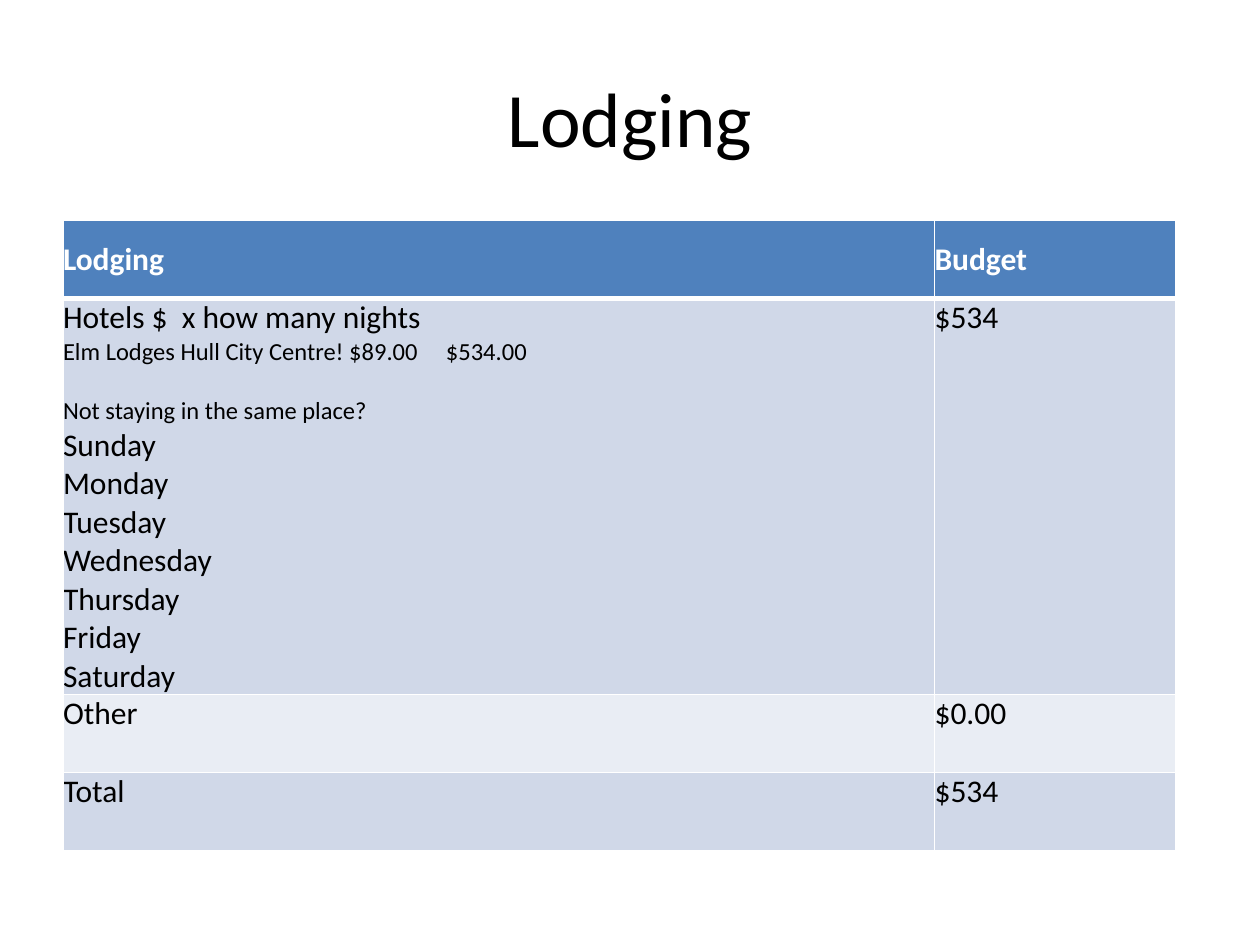
from lxml import etree
from pptx import Presentation
from pptx.dml.color import RGBColor
from pptx.enum.text import MSO_ANCHOR, PP_ALIGN
from pptx.oxml.ns import qn
from pptx.util import Cm, Pt

MIDDLE, TOP = MSO_ANCHOR.MIDDLE, MSO_ANCHOR.TOP
CENTER = PP_ALIGN.CENTER

COLORS = {
    "text": "000000",
    "header_text": "FFFFFF",
    "header": "4F81BD",
    "odd_row": "D0D8E8",
    "even_row": "E9EDF4",
    "border": "FFFFFF",
}
FONT = "Calibri"
TITLE = "Lodging"
HOTEL = "Elm Lodges Hull City Centre! $89.00\t$534.00"
QUESTION = "Not staying in the same place?"
DAYS = ["Sunday", "Monday", "Tuesday", "Wednesday", "Thursday", "Friday", "Saturday"]
BUDGET = [
    (["Lodging"], ["Budget"]),
    (["Hotels $  x how many nights", HOTEL, QUESTION, *DAYS], ["$534"]),
    (["Other"], ["$0.00"]),
    (["Total"], ["$534"]),
]
SMALL_LINES = (HOTEL, QUESTION)
COLUMN_WIDTHS = (17.57, 4.87)
ROW_HEIGHTS = (1.57, 7.98, 1.57, 1.57)
PRICE_TAB = Cm(7.72)
NO_MARGINS = dict.fromkeys(
    ("margin_left", "margin_right", "margin_top", "margin_bottom"), 0)


def apply_format(target, values):
    for name, value in values.items():
        setattr(target, name, value)


def write_line(paragraph, text, size, color, bold=False):
    run = paragraph.add_run()
    run.text = text
    apply_format(run.font, {"name": FONT, "size": Pt(size), "bold": bold})
    run.font.color.rgb = RGBColor.from_string(COLORS[color])


def add_borders(cell, widths):
    properties = cell._tc.get_or_add_tcPr()
    for position, (side, width) in enumerate(widths.items()):
        line = etree.Element(qn(f"a:ln{side}"), w=str(Pt(width)))
        fill = etree.SubElement(line, qn("a:solidFill"))
        etree.SubElement(fill, qn("a:srgbClr"), val=COLORS["border"])
        properties.insert(position, line)


def add_tab_stop(paragraph, position):
    tabs = etree.SubElement(paragraph._p.get_or_add_pPr(), qn("a:tabLst"))
    etree.SubElement(tabs, qn("a:tab"), pos=str(position), algn="l")


def fill_cell(cell, lines, row):
    header = row == 0
    band = "header" if header else "odd_row" if row % 2 else "even_row"
    apply_format(cell, {**NO_MARGINS, "vertical_anchor": MIDDLE if header else TOP})
    cell.fill.solid()
    cell.fill.fore_color.rgb = RGBColor.from_string(COLORS[band])
    add_borders(cell, {"L": 1, "R": 1, "T": 3 if row == 1 else 1, "B": 3 if header else 1})
    frame = cell.text_frame
    for index, text in enumerate(lines):
        paragraph = frame.add_paragraph() if index else frame.paragraphs[0]
        if text == QUESTION:
            paragraph.space_before = Pt(17)
        if text == HOTEL:
            add_tab_stop(paragraph, PRICE_TAB)
        write_line(paragraph, text, 14 if text in SMALL_LINES else 18,
                   "header_text" if header else "text", header)


def main():
    presentation = Presentation()
    apply_format(presentation, {"slide_width": Cm(25.4), "slide_height": Cm(19.05)})
    slide = presentation.slides.add_slide(presentation.slide_layouts[6])

    heading = slide.shapes.add_textbox(Cm(1.27), Cm(0.76), Cm(22.86), Cm(3.18)).text_frame
    apply_format(heading, {"word_wrap": True, "vertical_anchor": MIDDLE})
    heading.paragraphs[0].alignment = CENTER
    write_line(heading.paragraphs[0], TITLE, 44, "text")

    budget_table = slide.shapes.add_table(
        len(BUDGET), len(COLUMN_WIDTHS), Cm(1.27), Cm(4.45),
        Cm(sum(COLUMN_WIDTHS)), Cm(sum(ROW_HEIGHTS))).table
    for column, width in zip(budget_table.columns, COLUMN_WIDTHS):
        column.width = Cm(width)
    for row, (height, entries) in enumerate(zip(ROW_HEIGHTS, BUDGET)):
        budget_table.rows[row].height = Cm(height)
        for column, lines in enumerate(entries):
            fill_cell(budget_table.cell(row, column), lines, row)

    presentation.save("out.pptx")


if __name__ == "__main__":
    main()
